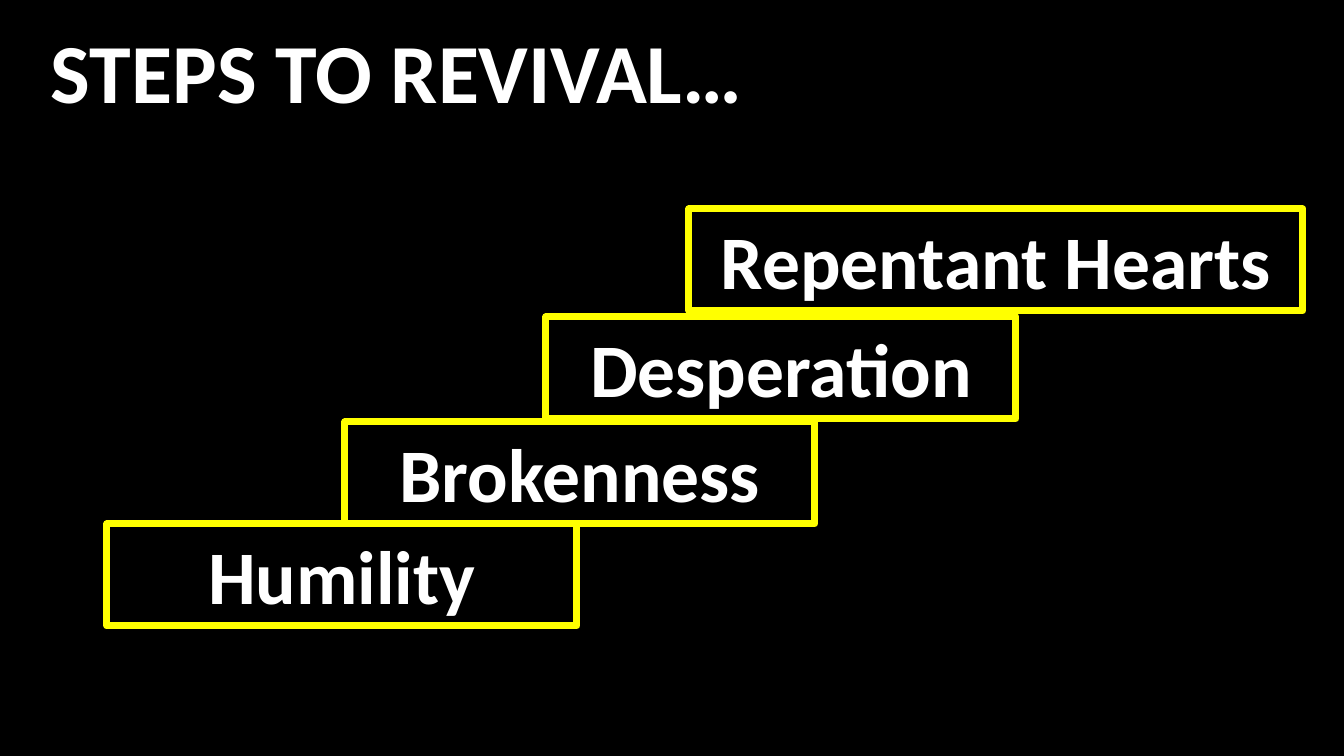
import pptx
import pptx.util
import pptx.dml.color
import pptx.enum.shapes
import pptx.enum.text

PX = 914400 / 100.8
STEP_W, STEP_H = 470, 102
STEPS = [
    ("Brokenness", 345, 422, STEP_W),
    ("Humility", 107, 524, STEP_W),
    ("Repentant Hearts", 689, 209, 614),
    ("Desperation", 546, 317, STEP_W),
]


def px(n):
    return pptx.util.Emu(round(n * PX))


def rgb(value):
    return pptx.dml.color.RGBColor.from_string(value)


def set_attrs(obj, values):
    for name, value in values.items():
        setattr(obj, name, value)


def write(tf, text, size, align, frame):
    set_attrs(tf, {"word_wrap": True, **frame})
    p = tf.paragraphs[0]
    p.alignment = align
    r = p.add_run()
    r.text = text
    set_attrs(r.font, {"name": "Calibri", "size": pptx.util.Pt(size), "bold": True})
    r.font.color.rgb = rgb("FFFFFF")


def add_title(s, text, x, y, w, h):
    tb = s.shapes.add_textbox(px(x), px(y), px(w), px(h))
    frame = {
        "margin_left": px(13), "margin_right": px(13),
        "margin_top": px(7), "margin_bottom": px(7),
        "vertical_anchor": pptx.enum.text.MSO_ANCHOR.TOP,
    }
    write(tb.text_frame, text, 60, pptx.enum.text.PP_ALIGN.LEFT, frame)


def add_step(s, text, x, y, w, h):
    sp = s.shapes.add_shape(
        pptx.enum.shapes.MSO_SHAPE.RECTANGLE, px(x), px(y), px(w), px(h))
    sp.shadow.inherit = False
    sp.fill.background()
    sp.line.color.rgb = rgb("FFFF00")
    sp.line.width = pptx.util.Pt(5)
    frame = {
        "auto_size": pptx.enum.text.MSO_AUTO_SIZE.SHAPE_TO_FIT_TEXT,
        "vertical_anchor": pptx.enum.text.MSO_ANCHOR.TOP,
    }
    write(sp.text_frame, text, 54, pptx.enum.text.PP_ALIGN.CENTER, frame)


def main():
    prs = pptx.Presentation()
    set_attrs(prs, {"slide_width": px(1344), "slide_height": px(756)})
    s = prs.slides.add_slide(prs.slide_layouts[6])
    s.background.fill.solid()
    s.background.fill.fore_color.rgb = rgb("000000")
    add_title(s, "STEPS TO REVIVAL…", 38, 13, 1268, 739)
    for text, x, y, w in STEPS:
        add_step(s, text, x, y, w, STEP_H)
    prs.save("out.pptx")


if __name__ == "__main__":
    main()
